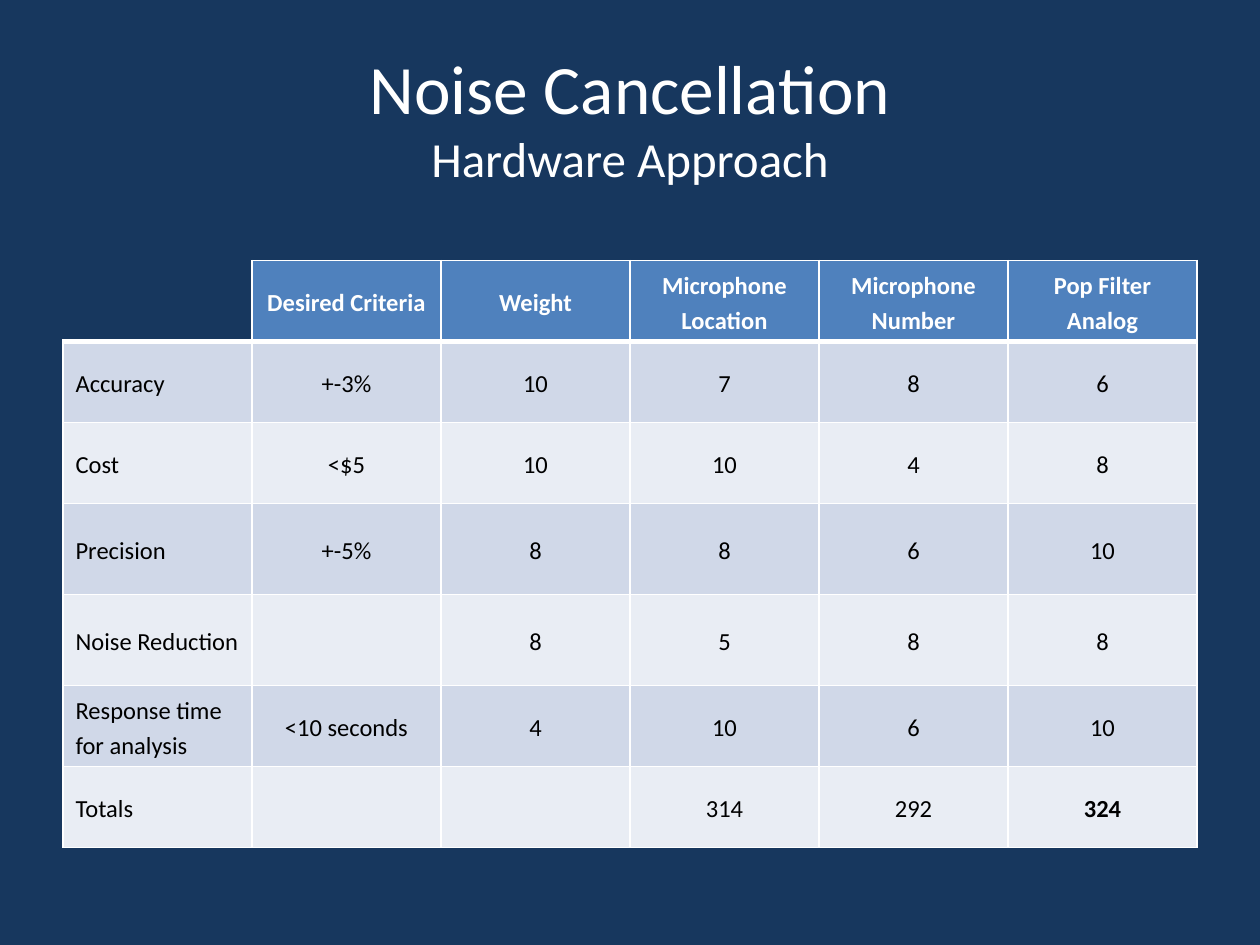
import pptx
import pptx.util
import pptx.dml.color
import pptx.enum.text
import pptx.oxml
import pptx.oxml.ns

Pt = pptx.util.Pt
RGB = pptx.dml.color.RGBColor
ALIGN = pptx.enum.text.PP_ALIGN
MIDDLE = pptx.enum.text.MSO_ANCHOR.MIDDLE

NAVY = RGB(0x17, 0x37, 0x5E)
BLUE = RGB(0x4F, 0x81, 0xBD)
MIST = RGB(0xD0, 0xD8, 0xE8)
PALE = RGB(0xE9, 0xED, 0xF4)
WHITE = RGB(0xFF, 0xFF, 0xFF)
BLACK = RGB(0, 0, 0)

HEAD = ["", "Desired Criteria", "Weight", "Microphone Location",
        "Microphone Number", "Pop Filter Analog"]
BODY = [
    ["Accuracy", "+-3%", "10", "7", "8", "6"],
    ["Cost", "<$5", "10", "10", "4", "8"],
    ["Precision", "+-5%", "8", "8", "6", "10"],
    ["Noise Reduction", "", "8", "5", "8", "8"],
    ["Response time for analysis", "<10 seconds", "4", "10", "6", "10"],
    ["Totals", "", "", "314", "292", "324"],
]
HIGH = [46.3, 46.3, 46.3, 52, 52, 46.3, 46.3]


class Deck:
    """Holds the style and the current slide."""

    def __init__(self, slide, font="Calibri"):
        self.slide = slide
        self.font = font

    def back(self, color):
        fill = self.slide.background.fill
        fill.solid()
        fill.fore_color.rgb = color

    def style(self, run, size, color, bold=False):
        font = run.font
        font.name, font.size, font.bold = self.font, Pt(size), bold
        font.color.rgb = color

    def title(self, lines, sizes, left, top, width, height):
        box = self.slide.shapes.add_textbox(Pt(left), Pt(top), Pt(width), Pt(height))
        frame = box.text_frame
        frame.word_wrap = True
        frame.vertical_anchor = MIDDLE
        para = frame.paragraphs[0]
        para.text = "\v".join(lines)
        para.alignment = ALIGN.CENTER
        for run, size in zip(para.runs, sizes):
            self.style(run, size, WHITE)

    def edge(self, cell, side, color, width):
        # Borders come before the fill, in the order L, R, T, B
        props = cell._tc.get_or_add_tcPr()
        line = pptx.oxml.parse_xml(
            f'<a:ln{side} {pptx.oxml.ns.nsdecls("a")} w="{Pt(width)}">'
            f'<a:solidFill><a:srgbClr val="{color}"/></a:solidFill></a:ln{side}>')
        props.insert("LRTB".index(side), line)

    def cell(self, cell, text, fill, color, bold, align):
        cell.fill.solid()
        cell.fill.fore_color.rgb = fill
        cell.vertical_anchor = MIDDLE
        if not text:
            return
        para = cell.text_frame.paragraphs[0]
        para.text = text
        para.alignment = align
        para.line_spacing = 1.15
        para.space_after = Pt(10)
        self.style(para.runs[0], 14, color, bold)

    def table(self, data, high, left, top, width):
        wide = width / len(data[0])
        grid = self.slide.shapes.add_table(
            len(data), len(data[0]), Pt(left), Pt(top), Pt(width), Pt(sum(high))).table
        for col in grid.columns:
            col.width = Pt(wide)
        last = len(data) - 1, len(data[0]) - 1
        for r, row in enumerate(data):
            grid.rows[r].height = Pt(high[r])
            for c, text in enumerate(row):
                cell = grid.cell(r, c)
                head, blank = r == 0, (r, c) == (0, 0)
                fill = NAVY if blank else BLUE if head else MIST if r % 2 else PALE
                self.cell(cell, text, fill, WHITE if head else BLACK,
                          head or (r, c) == last,
                          ALIGN.CENTER if c else ALIGN.LEFT)
                outer = NAVY if blank else WHITE
                self.edge(cell, "L", outer, 1)
                self.edge(cell, "R", WHITE, 1)
                self.edge(cell, "T", outer, 3 if r == 1 else 1)
                self.edge(cell, "B", WHITE, 3 if head else 1)


def main():
    show = pptx.Presentation()
    show.slide_width, show.slide_height = Pt(720), Pt(540)
    deck = Deck(show.slides.add_slide(show.slide_layouts[6]))
    deck.back(NAVY)

    # Title
    deck.title(["Noise Cancellation", "Hardware Approach"], [39.6, 28],
               36, 21.6, 648, 90)

    # Decision matrix
    deck.table([HEAD] + BODY, HIGH, 36, 149, 648)

    show.save("out.pptx")


if __name__ == "__main__":
    main()
